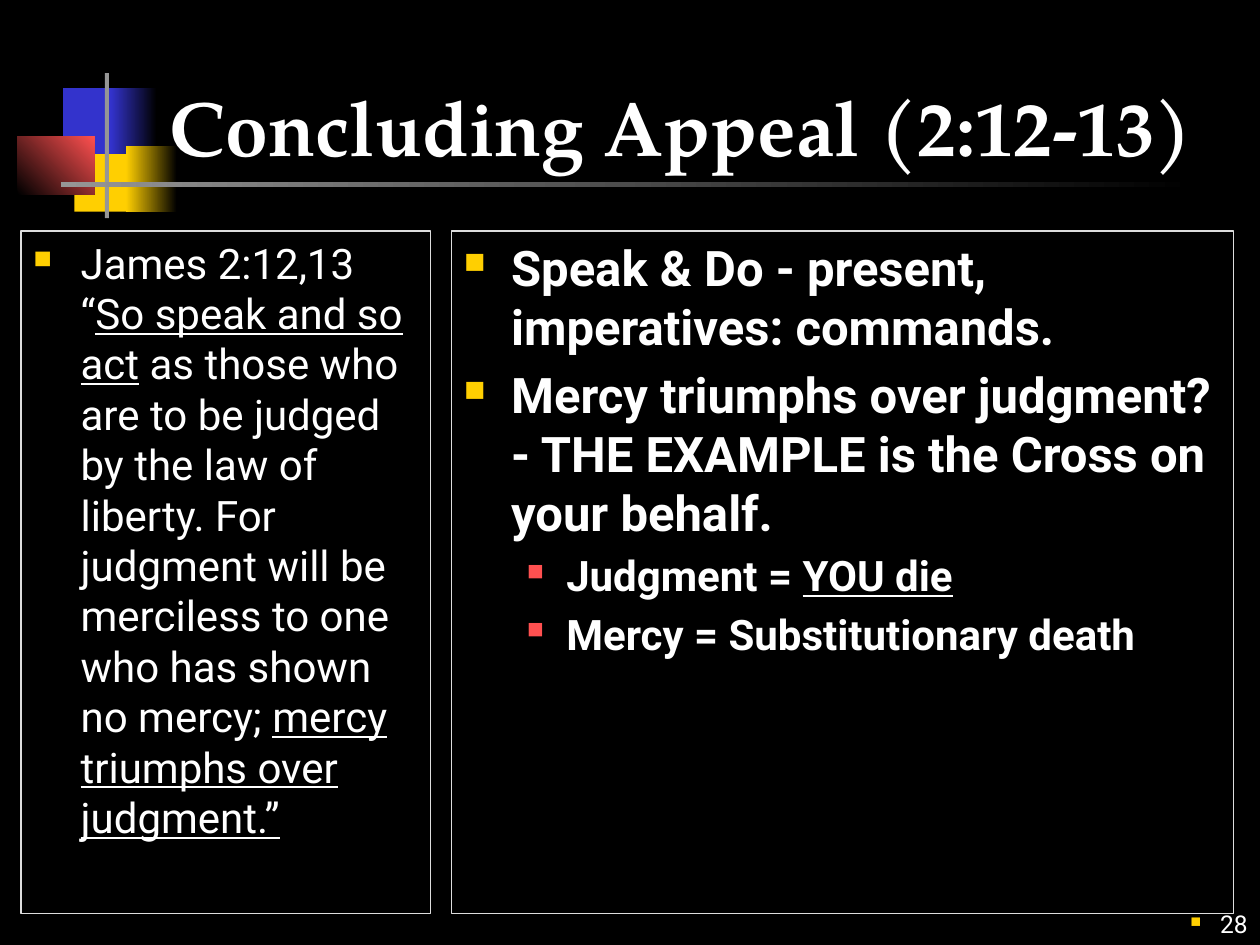
from dataclasses import dataclass

from lxml import etree
from pptx import Presentation
from pptx.dml.color import RGBColor
from pptx.enum import shapes, text
from pptx.oxml import ns
from pptx.util import Pt


@dataclass(frozen=True)
class Theme:
    black: str = "000000"
    white: str = "FFFFFF"
    yellow: str = "FFCF01"
    blue: str = "3333CC"
    red: str = "FF5050"
    grey: str = "969696"
    border: str = "DDDDDD"
    heading_font: str = "TeX Gyre Pagella"
    body_font: str = "Roboto"
    title_size: int = 44
    large_size: int = 28
    body_size: int = 24
    number_size: int = 14


@dataclass(frozen=True)
class Bullet:
    colour: str
    percent: int
    margin: float
    hanging: float


def rgb(colour):
    return RGBColor.from_string(colour)


def add_xml(parent, tag, **attributes):
    return etree.SubElement(parent, ns.qn(tag), attributes)


class SlideBuilder:
    def __init__(self, slide, theme):
        self.slide = slide
        self.theme = theme
        slide.background.fill.solid()
        slide.background.fill.fore_color.rgb = rgb(theme.black)

    def block(self, box, *colours, angle=0):
        """Draw a borderless rectangle: one colour is solid, two make a gradient."""
        shape = self.slide.shapes.add_shape(
            shapes.MSO_SHAPE.RECTANGLE, *map(Pt, box))
        shape.shadow.inherit = False
        shape.line.fill.background()
        if len(colours) == 1:
            shape.fill.solid()
            shape.fill.fore_color.rgb = rgb(colours[0])
        else:
            shape.fill.gradient()
            shape.fill.gradient_angle = angle
            for stop, colour, position in zip(
                    shape.fill.gradient_stops, colours, (0, 1)):
                stop.color.rgb = rgb(colour)
                stop.position = position

    def text_box(self, box, anchor=text.MSO_ANCHOR.TOP, bordered=False):
        shape = self.slide.shapes.add_textbox(*map(Pt, box))
        shape.text_frame.word_wrap = True
        shape.text_frame.vertical_anchor = anchor
        if bordered:
            shape.line.color.rgb = rgb(self.theme.border)
            shape.line.width = Pt(0.75)
        return shape.text_frame

    def add_runs(self, paragraph, pieces, size, font=None, bold=False):
        """Add the pieces as runs; every second piece is underlined."""
        for index, piece in enumerate(pieces):
            run = paragraph.add_run()
            run.text = piece
            run.font.size = Pt(size)
            run.font.name = font or self.theme.body_font
            run.font.bold = bold
            run.font.underline = index % 2 == 1
            run.font.color.rgb = rgb(self.theme.white)

    def add_bullet(self, paragraph, bullet):
        properties = paragraph._p.get_or_add_pPr()
        properties.set("marL", str(Pt(bullet.margin)))
        properties.set("indent", str(-Pt(bullet.hanging)))
        colour = add_xml(properties, "a:buClr")
        add_xml(colour, "a:srgbClr", val=bullet.colour)
        add_xml(properties, "a:buSzPct", val=str(bullet.percent * 1000))
        add_xml(properties, "a:buChar", char="■")

    def title(self, box, words):
        paragraph = self.text_box(box, text.MSO_ANCHOR.BOTTOM).paragraphs[0]
        self.add_runs(paragraph, [words], self.theme.title_size,
                      self.theme.heading_font, bold=True)
        effects = etree.Element(ns.qn("a:effectLst"))
        shadow = add_xml(effects, "a:outerShdw", dist=str(Pt(2.8)), dir="2700000")
        add_xml(shadow, "a:srgbClr", val=self.theme.grey)
        properties = paragraph.runs[0]._r.get_or_add_rPr()
        properties.find(ns.qn("a:solidFill")).addnext(effects)

    def panel(self, box, items, bold=False):
        """Draw a bordered list of (bullet, size, pieces) items."""
        frame = self.text_box(box, bordered=True)
        for index, (bullet, size, pieces) in enumerate(items):
            paragraph = frame.add_paragraph() if index else frame.paragraphs[0]
            paragraph.level = int(bullet.margin > 30)
            paragraph.space_before = Pt(size * 0.2)
            self.add_bullet(paragraph, bullet)
            self.add_runs(paragraph, pieces, size, bold=bold)

    def slide_number(self, box, number, bullet):
        paragraph = self.text_box(box, text.MSO_ANCHOR.BOTTOM).paragraphs[0]
        paragraph.alignment = text.PP_ALIGN.RIGHT
        self.add_bullet(paragraph, bullet)
        self.add_runs(paragraph, [number], self.theme.number_size)


def main():
    theme = Theme()
    presentation = Presentation()
    presentation.slide_width, presentation.slide_height = Pt(720), Pt(540)
    slide = presentation.slides.add_slide(presentation.slide_layouts[6])
    builder = SlideBuilder(slide, theme)

    builder.block((42.5, 83.5, 33, 37.5), theme.yellow)
    builder.block((36, 50.4, 34.5, 37.5), theme.blue)
    builder.block((63.4, 50.4, 26, 37.5), theme.blue, theme.black)
    builder.block((72, 83.5, 29, 37.5), theme.yellow, theme.black)
    builder.block((10, 77.8, 44, 33.2), theme.black, theme.red, angle=45)
    builder.block((60, 41.8, 2.2, 82.8), theme.grey)
    builder.block((34.8, 104.2, 648, 2.4), theme.grey, theme.black)

    main_point = Bullet(theme.yellow, 60, margin=27, hanging=27)
    sub_point = Bullet(theme.red, 55, margin=58.5, hanging=22.5)
    number_mark = Bullet(theme.yellow, 60, margin=17, hanging=17)

    builder.slide_number((642.2, 504, 77.8, 36), "28", number_mark)
    builder.title((90, 12, 613.5, 90), "Concluding Appeal (2:12-13)")
    builder.panel((12, 132, 234, 390), [
        (main_point, theme.body_size, [
            "James 2:12,13  “", "So speak and so act",
            " as those who are to be judged by the law of liberty. For judgment "
            "will be merciless to one who has shown no mercy; ",
            "mercy triumphs over judgment.”"]),
    ])
    builder.panel((258, 132, 447, 390), [
        (main_point, theme.large_size,
         ["Speak & Do - present, imperatives: commands."]),
        (main_point, theme.large_size,
         ["Mercy triumphs over judgment? - THE EXAMPLE is the Cross on "
          "your behalf."]),
        (sub_point, theme.body_size, ["Judgment = ", "YOU die"]),
        (sub_point, theme.body_size, ["Mercy = Substitutionary death"]),
    ], bold=True)
    presentation.save("out.pptx")


if __name__ == "__main__":
    main()
